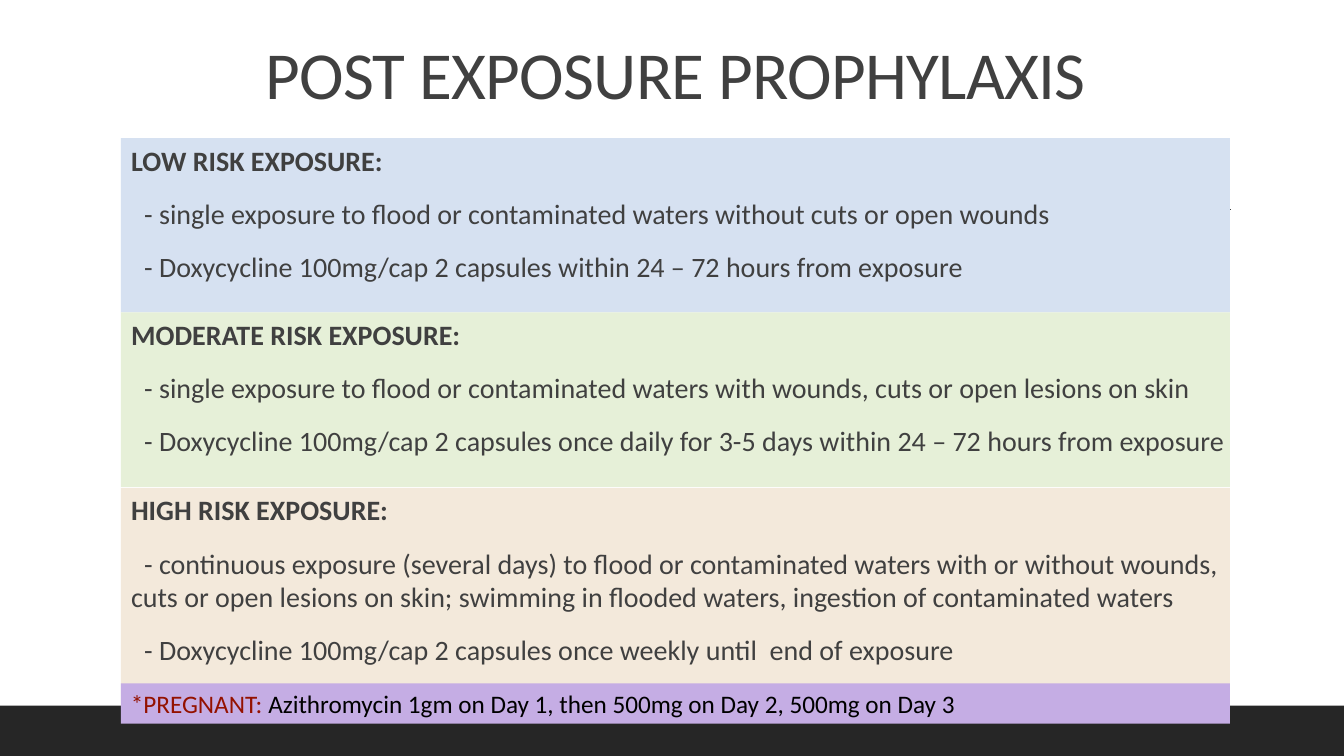
from dataclasses import dataclass

from lxml.etree import SubElement
from pptx import Presentation
from pptx.dml.color import RGBColor
from pptx.enum.shapes import MSO_CONNECTOR, MSO_SHAPE
from pptx.enum.text import MSO_ANCHOR, PP_ALIGN
from pptx.oxml.ns import qn
from pptx.util import Inches, Pt


@dataclass(frozen=True)
class Theme:
    font: str = "Calibri"
    ink: str = "404040"
    footer: str = "262626"
    low: str = "D6E1F1"
    moderate: str = "E6F0D8"
    high: str = "F3E9DB"
    pregnant: str = "C5ADE4"
    warning: str = "941100"
    black: str = "000000"
    title_size: int = 48
    body_size: int = 20
    note_size: int = 18


THEME = Theme()
LEFT, WIDTH = 1.2, 11
RISKS = [
    (1.37, 1.73, THEME.low, "LOW RISK EXPOSURE:", [
        "- single exposure to flood or contaminated waters without cuts or open wounds",
        "- Doxycycline 100mg/cap 2 capsules within 24 – 72 hours from exposure",
    ]),
    (3.1, 1.73, THEME.moderate, "MODERATE RISK EXPOSURE:", [
        "- single exposure to flood or contaminated waters with wounds, cuts or open lesions on skin",
        "- Doxycycline 100mg/cap 2 capsules once daily for 3-5 days within 24 – 72 hours from exposure",
    ]),
    (4.84, 2.14, THEME.high, "HIGH RISK EXPOSURE:", [
        "- continuous exposure (several days) to flood or contaminated waters with or without wounds, "
        "cuts or open lesions on skin; swimming in flooded waters, ingestion of contaminated waters",
        "- Doxycycline 100mg/cap 2 capsules once weekly until  end of exposure",
    ]),
]


def set_all(target, formats):
    for name, value in formats.items():
        setattr(target, name, value)


def add_run(paragraph, text, size, color, bold=False):
    run = paragraph.add_run()
    run.text = text
    set_all(run.font, {"name": THEME.font, "size": Pt(size), "bold": bold})
    run.font.color.rgb = RGBColor.from_string(color)
    return run


def add_band(slide, left, top, width, height, color):
    band = slide.shapes.add_shape(
        MSO_SHAPE.RECTANGLE, Inches(left), Inches(top), Inches(width), Inches(height))
    band.shadow.inherit = False
    band.fill.solid()
    band.fill.fore_color.rgb = RGBColor.from_string(color)
    band.line.fill.background()
    set_all(band.text_frame, {"word_wrap": True, "vertical_anchor": MSO_ANCHOR.TOP})
    band.text_frame.paragraphs[0].alignment = PP_ALIGN.LEFT
    return band


def add_rule(slide):
    rule = slide.shapes.add_connector(
        MSO_CONNECTOR.STRAIGHT, Inches(1.31), Inches(2.08), Inches(12.21), Inches(2.08))
    rule.line.color.rgb = RGBColor.from_string(THEME.ink)
    rule.line.width = Pt(1)
    SubElement(rule._element.spPr, qn("a:effectLst"))


def add_title(slide, text):
    box = slide.shapes.add_textbox(Inches(LEFT), Inches(-0.41), Inches(WIDTH), Inches(1.59))
    set_all(box.text_frame, {"word_wrap": True, "vertical_anchor": MSO_ANCHOR.BOTTOM})
    heading = box.text_frame.paragraphs[0]
    set_all(heading, {"alignment": PP_ALIGN.CENTER, "line_spacing": 0.9})
    run = add_run(heading, text, THEME.title_size, THEME.ink)
    run.font._element.set("spc", "-50")


def add_risk(slide, top, height, color, heading, advice):
    """Add a coloured panel with a bold heading and its dashed advice lines."""
    frame = add_band(slide, LEFT, top, WIDTH, height, color).text_frame
    set_all(frame, {"margin_left": 0, "margin_right": 0})
    for index, text in enumerate([heading, *advice]):
        is_heading = index == 0
        paragraph = frame.paragraphs[0] if is_heading else frame.add_paragraph()
        set_all(paragraph, {"alignment": PP_ALIGN.LEFT,
                            "space_before": Pt(12), "space_after": Pt(2)})
        properties = paragraph._p.get_or_add_pPr()
        properties.set("marL", str(Inches(0.1)))
        properties.set("indent", str(Inches(0 if is_heading else 0.13)))
        add_run(paragraph, text, THEME.body_size, THEME.ink, bold=is_heading)


def add_pregnancy_note(slide):
    note = add_band(slide, LEFT, 6.78, WIDTH, 0.4, THEME.pregnant).text_frame.paragraphs[0]
    add_run(note, "*PREGNANT: ", THEME.note_size, THEME.warning)
    add_run(note, "Azithromycin 1gm on Day 1, then 500mg on Day 2, 500mg on Day 3",
            THEME.note_size, THEME.black)


def main():
    deck = Presentation()
    set_all(deck, {"slide_width": Inches(13.33), "slide_height": Inches(7.5)})
    slide = deck.slides.add_slide(deck.slide_layouts[6])
    add_band(slide, 0, 7, 13.33, 0.5, THEME.footer)
    add_rule(slide)
    add_title(slide, "POST EXPOSURE PROPHYLAXIS")
    for risk in RISKS:
        add_risk(slide, *risk)
    add_pregnancy_note(slide)
    deck.save("out.pptx")


if __name__ == "__main__":
    main()
